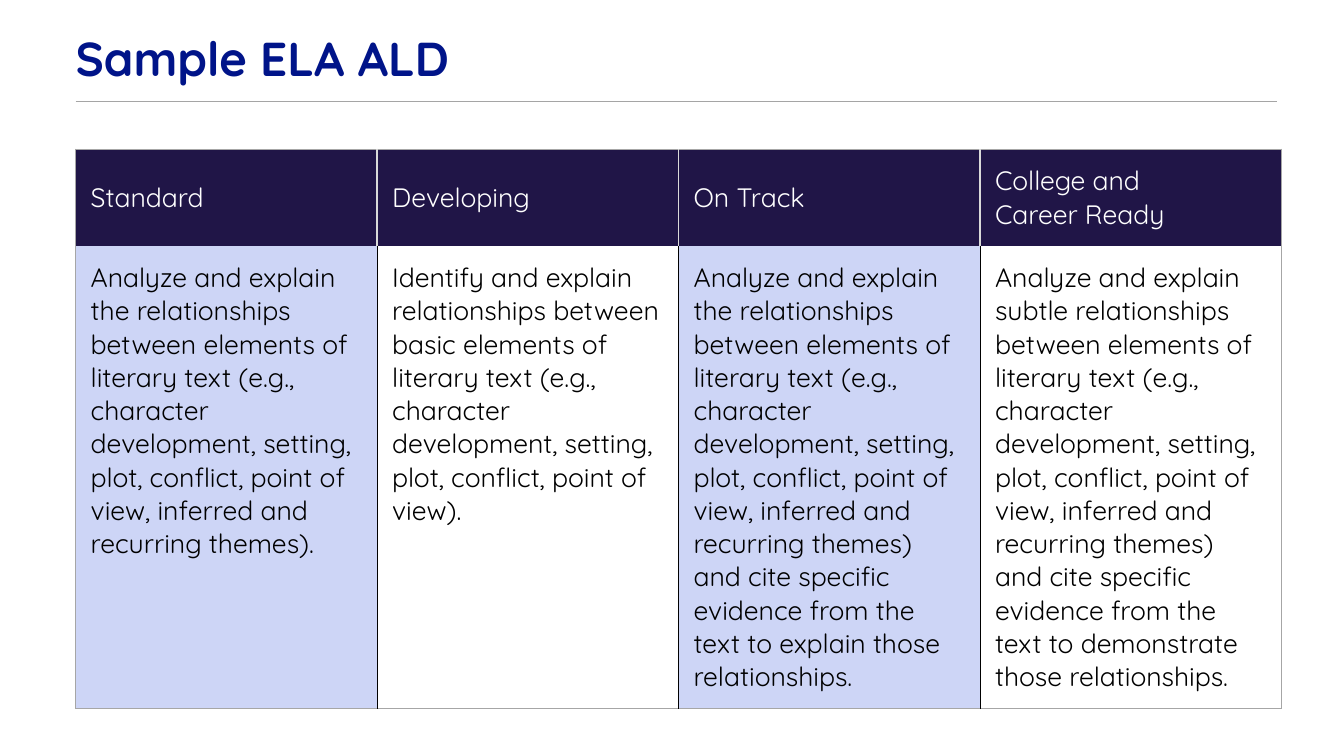
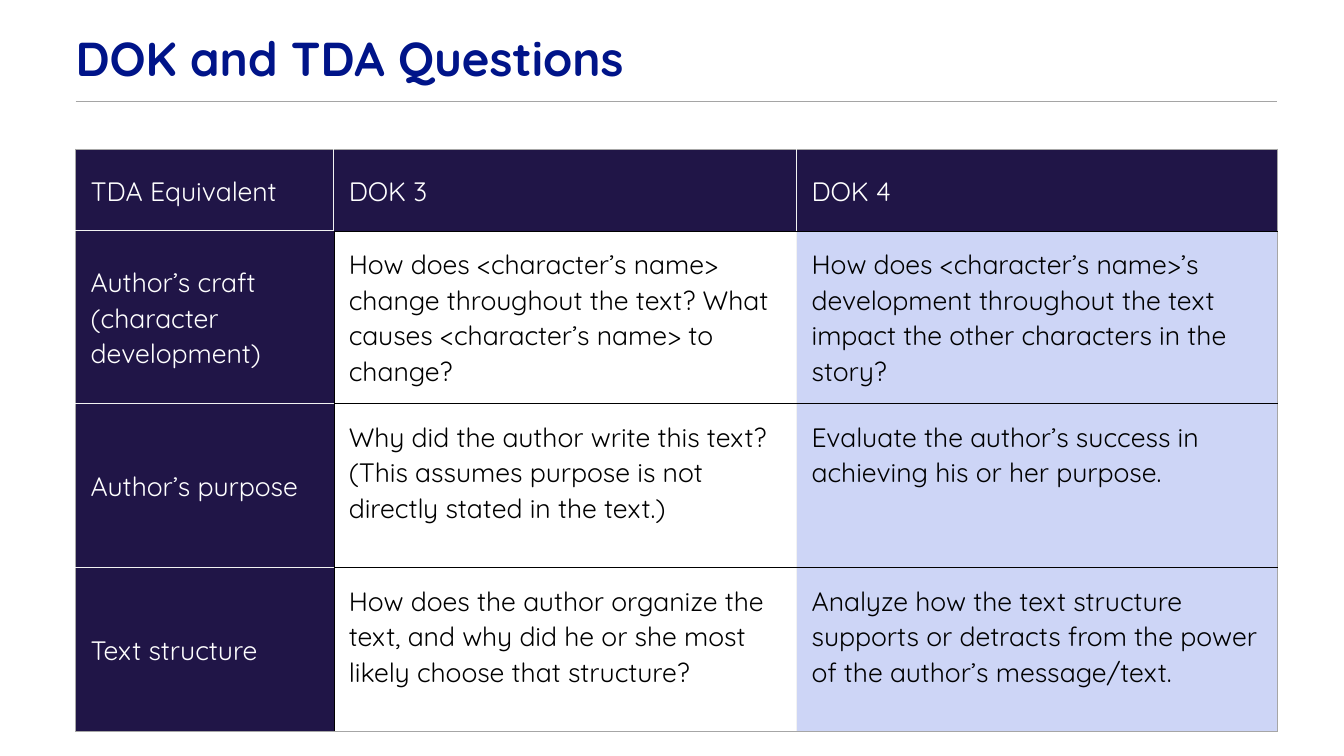
from dataclasses import dataclass

from lxml import etree
from pptx import Presentation
from pptx.dml.color import RGBColor
from pptx.enum.shapes import MSO_CONNECTOR
from pptx.enum.text import MSO_ANCHOR
from pptx.oxml.ns import qn
from pptx.util import Inches, Pt

STRAIGHT = MSO_CONNECTOR.STRAIGHT
MIDDLE, TOP = MSO_ANCHOR.MIDDLE, MSO_ANCHOR.TOP


@dataclass(frozen=True)
class Theme:
    font: str = "Quicksand"
    title_size: float = 34
    cell_size: float = 19
    title: str = "001489"
    rule: str = "A5A5A5"
    dark: str = "201547"
    tint: str = "CDD5F6"
    white: str = "FFFFFF"
    black: str = "000000"
    margin: float = 0.75
    rule_right: float = 12.67
    table_top: float = 1.48
    cell_inset: float = 0.15


THEME = Theme()

OUTER = ("A6A6A6", 1)
THIN = (THEME.black, 0.25)
SILVER = ("D9D9D9", 1)
PALE = ("F2F2F2", 1)

SLIDES = [
    {
        "title": "Sample ELA ALD",
        "columns": [2.99] * 4,
        "rows": [0.96, 4.59],
        "label_column": False,
        "line_spacing": 1.0,
        "dark_line": SILVER,
        "column_line": THIN,
        "row_line": None,
        "cells": [
            ["Standard", "Developing", "On Track", "College and\vCareer Ready"],
            [
                "Analyze and explain the relationships between elements of literary text "
                "(e.g., character development, setting, plot, conflict, point of view, "
                "inferred and recurring themes).",
                "Identify and explain relationships between basic elements of literary text "
                "(e.g., character development, setting, plot, conflict, point of view).",
                "Analyze and explain the relationships between elements of literary text "
                "(e.g., character development, setting, plot, conflict, point of view, "
                "inferred and recurring themes) and cite specific evidence from the text "
                "to explain those relationships.",
                "Analyze and explain subtle relationships between elements of literary text "
                "(e.g., character development, setting, plot, conflict, point of view, "
                "inferred and recurring themes) and cite specific evidence from the text "
                "to demonstrate those relationships.",
            ],
        ],
    },
    {
        "title": "DOK and TDA Questions",
        "columns": [2.56, 4.59, 4.77],
        "rows": [0.81, 1.71, 1.63, 1.63],
        "label_column": True,
        "line_spacing": 1.07,
        "dark_line": PALE,
        "column_line": PALE,
        "row_line": THIN,
        "cells": [
            ["TDA Equivalent", "DOK 3", "DOK 4"],
            [
                "Author’s craft\n(character development)",
                "How does <character’s name> change throughout the text? "
                "What causes <character’s name> to change?",
                "How does <character’s name>’s development throughout the text "
                "impact the other characters in the story?",
            ],
            [
                "Author’s purpose",
                "Why did the author write this text? "
                "(This assumes purpose is not directly stated in the text.)",
                "Evaluate the author’s success in achieving his or her purpose.",
            ],
            [
                "Text structure",
                "How does the author organize the text, "
                "and why did he or she most likely choose that structure?",
                "Analyze how the text structure supports or detracts "
                "from the power of the author’s message/text.",
            ],
        ],
    },
]


def write(frame, text, size, color, spacing, bold=False):
    frame.word_wrap = True
    for index, content in enumerate(text.split("\n")):
        para = frame.add_paragraph() if index else frame.paragraphs[0]
        para.line_spacing = spacing
        for part, line in enumerate(content.split("\v")):
            if part:
                para.add_line_break()
            span = para.add_run()
            span.text = line
            span.font.name = THEME.font
            span.font.size = Pt(size)
            span.font.bold = bold
            span.font.color.rgb = RGBColor.from_string(color)


def add_heading(page, title):
    rule = page.shapes.add_connector(
        STRAIGHT, Inches(THEME.margin), Inches(1.01), Inches(THEME.rule_right), Inches(1.01)
    )
    rule.line.color.rgb = RGBColor.from_string(THEME.rule)
    rule.line.width = Pt(1)
    etree.SubElement(rule._element.spPr, qn("a:effectLst"))

    box = page.shapes.add_textbox(Inches(THEME.margin), Inches(0.34), Inches(9.37), Inches(0.53))
    frame = box.text_frame
    frame.margin_left = frame.margin_right = 0
    frame.vertical_anchor = MIDDLE
    write(frame, title, THEME.title_size, THEME.title, 0.9, bold=True)


def is_dark(spec, row, column):
    return row == 0 or (spec["label_column"] and column == 0)


def shared_line(spec, cell, neighbour):
    row, column = neighbour
    if not (0 <= row < len(spec["rows"]) and 0 <= column < len(spec["columns"])):
        return OUTER
    dark_count = is_dark(spec, *cell) + is_dark(spec, *neighbour)
    same_row = cell[0] == row
    if dark_count == 2 and (same_row or spec["label_column"]):
        return spec["dark_line"]
    if not same_row:
        return spec["row_line"]
    return THIN if dark_count else spec["column_line"]


def set_border(cell, side, line):
    border = etree.SubElement(cell._tc.get_or_add_tcPr(), qn(f"a:ln{side}"))
    if line is None:
        etree.SubElement(border, qn("a:noFill"))
        return
    color, width = line
    border.set("w", str(Pt(width)))
    fill = etree.SubElement(border, qn("a:solidFill"))
    etree.SubElement(fill, qn("a:srgbClr")).set("val", color)


def fill_cell(cell, spec, row, column):
    neighbours = {
        "L": (row, column - 1),
        "R": (row, column + 1),
        "T": (row - 1, column),
        "B": (row + 1, column),
    }
    for side, neighbour in neighbours.items():
        set_border(cell, side, shared_line(spec, (row, column), neighbour))

    dark = is_dark(spec, row, column)
    body_fill = THEME.white if column % 2 else THEME.tint
    cell.fill.solid()
    cell.fill.fore_color.rgb = RGBColor.from_string(THEME.dark if dark else body_fill)
    cell.vertical_anchor = MIDDLE if dark else TOP
    cell.margin_left = cell.margin_right = Inches(THEME.cell_inset)
    cell.margin_top = cell.margin_bottom = Inches(THEME.cell_inset)
    write(
        cell.text_frame,
        spec["cells"][row][column],
        THEME.cell_size,
        THEME.white if dark else THEME.black,
        spec["line_spacing"],
    )


def add_grid(page, spec):
    widths, heights = spec["columns"], spec["rows"]
    table = page.shapes.add_table(
        len(heights),
        len(widths),
        Inches(THEME.margin),
        Inches(THEME.table_top),
        Inches(sum(widths)),
        Inches(sum(heights)),
    ).table
    table.horz_banding = False
    for column, width in enumerate(widths):
        table.columns[column].width = Inches(width)
    for row, height in enumerate(heights):
        table.rows[row].height = Inches(height)
        for column in range(len(widths)):
            fill_cell(table.cell(row, column), spec, row, column)


def main():
    deck = Presentation()
    deck.slide_width, deck.slide_height = Inches(13.33), Inches(7.5)
    blank = deck.slide_layouts[6]
    for spec in SLIDES:
        page = deck.slides.add_slide(blank)
        add_heading(page, spec["title"])
        add_grid(page, spec)
    deck.save("out.pptx")


if __name__ == "__main__":
    main()
